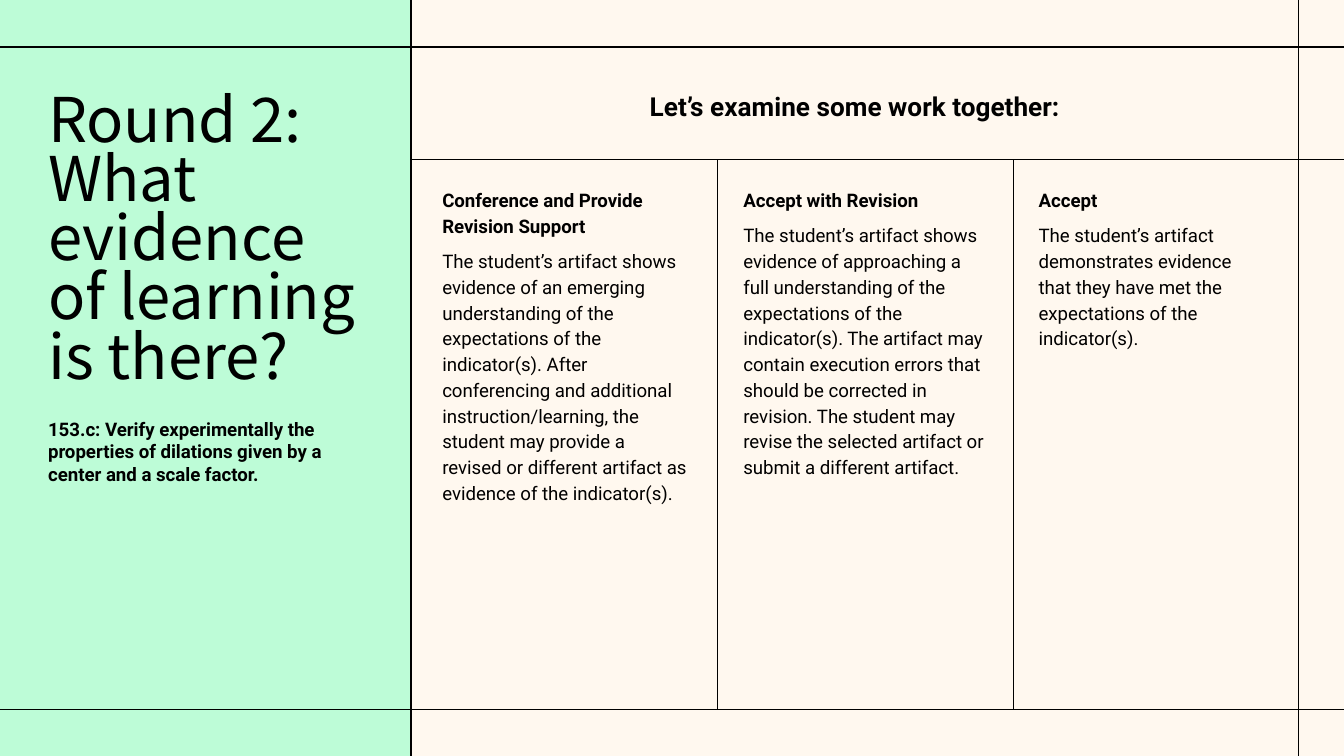
from pptx import Presentation
from pptx.dml.color import RGBColor
from pptx.enum.shapes import MSO_CONNECTOR as Link, MSO_SHAPE as Form
from pptx.enum.text import MSO_AUTO_SIZE as Fit, PP_ALIGN as Align
from pptx.oxml.ns import qn
from pptx.util import Cm, Pt

BLACK = RGBColor(0, 0, 0)
CREAM = RGBColor(0xFF, 0xF8, 0xEF)
MINT = RGBColor(0xBD, 0xFC, 0xD7)
SANS = "Roboto"
HEAD = "Noto Sans CJK KR"
WIDE, HIGH = 25.4, 14.29
EDGE, RIGHT = 7.77, 24.54
TOP, MID, BASE = 0.89, 3.02, 13.41
SPLITS = (13.56, 19.15)

LEVELS = (
    (8.36, 6.5, "Conference and Provide Revision Support",
     "The student’s artifact shows evidence of an emerging understanding of "
     "the expectations of the indicator(s). After conferencing and additional "
     "instruction/learning, the student may provide a revised or different "
     "artifact as evidence of the indicator(s)."),
    (14.05, 6.02, "Accept with Revision",
     "The student’s artifact shows evidence of approaching a full "
     "understanding of the expectations of the indicator(s). The artifact may "
     "contain execution errors that should be corrected in revision. The "
     "student may revise the selected artifact or submit a different artifact."),
    (19.63, 3.07, "Accept",
     "The student’s artifact demonstrates evidence \n"
     "that they have met the expectations of the indicator(s)."),
)


def rule(slide, x1, y1, x2, y2):
    line = slide.shapes.add_connector(Link.STRAIGHT, Cm(x1), Cm(y1), Cm(x2), Cm(y2))
    line.line.color.rgb = BLACK
    line.line.width = Pt(0.75)
    props = line._element.spPr
    props.append(props.makeelement(qn("a:effectLst"), {}))


def panel(slide):
    rect = slide.shapes.add_shape(Form.RECTANGLE, 0, 0, Cm(EDGE), Cm(HIGH))
    rect.shadow.inherit = False
    rect.fill.solid()
    rect.fill.fore_color.rgb = MINT
    rect.line.fill.background()


def label(slide, x, y, w, h, texts, size=10, face=SANS, bold=True, gap=None):
    box = slide.shapes.add_textbox(Cm(x), Cm(y), Cm(w), Cm(h))
    frame = box.text_frame
    frame.word_wrap = True
    frame.auto_size = Fit.SHAPE_TO_FIT_TEXT
    frame.margin_left = frame.margin_right = 0
    frame.margin_top = frame.margin_bottom = 0
    for i, text in enumerate(texts):
        para = frame.add_paragraph() if i else frame.paragraphs[0]
        para.text = text
        para.line_spacing = gap
        font = para.font
        font.name, font.size, font.bold = face, Pt(size), bold
        font.color.rgb = BLACK
    return frame.paragraphs


def level(slide, x, h, name, text):
    body = label(slide, x, 3.51, 4.62, h, (name, text), gap=1.15)[1]
    body.font.bold = False
    body.space_before = body.space_after = Pt(5)


def main():
    """Build the slide on levels of evidence and save it."""
    deck = Presentation()
    deck.slide_width, deck.slide_height = Cm(WIDE), Cm(HIGH)
    slide = deck.slides.add_slide(deck.slide_layouts[6])
    slide.background.fill.solid()
    slide.background.fill.fore_color.rgb = CREAM

    rule(slide, 0, MID, WIDE, MID)
    panel(slide)
    for y in (TOP, BASE):
        rule(slide, 0, y, WIDE, y)
    for x in (EDGE, RIGHT):
        rule(slide, x, 0, x, HIGH)
    for x in SPLITS:
        rule(slide, x, MID, x, BASE)

    title = ("Round 2:", "What evidence of learning is there?")
    label(slide, 0.91, 1.8, 6.02, 5.64, title, 33, HEAD, False, 0.8)
    label(slide, 0.91, 7.9, 6.02, 1.27, (
        "153.c: Verify experimentally the properties of dilations "
        "given by a center and a scale factor.",))
    lead = label(slide, 8.66, 1.7, 14.99, 0.61,
                 ("Let’s examine some work together:",), 14)
    lead[0].alignment = Align.CENTER
    for item in LEVELS:
        level(slide, *item)
    deck.save("out.pptx")


if __name__ == "__main__":
    main()
